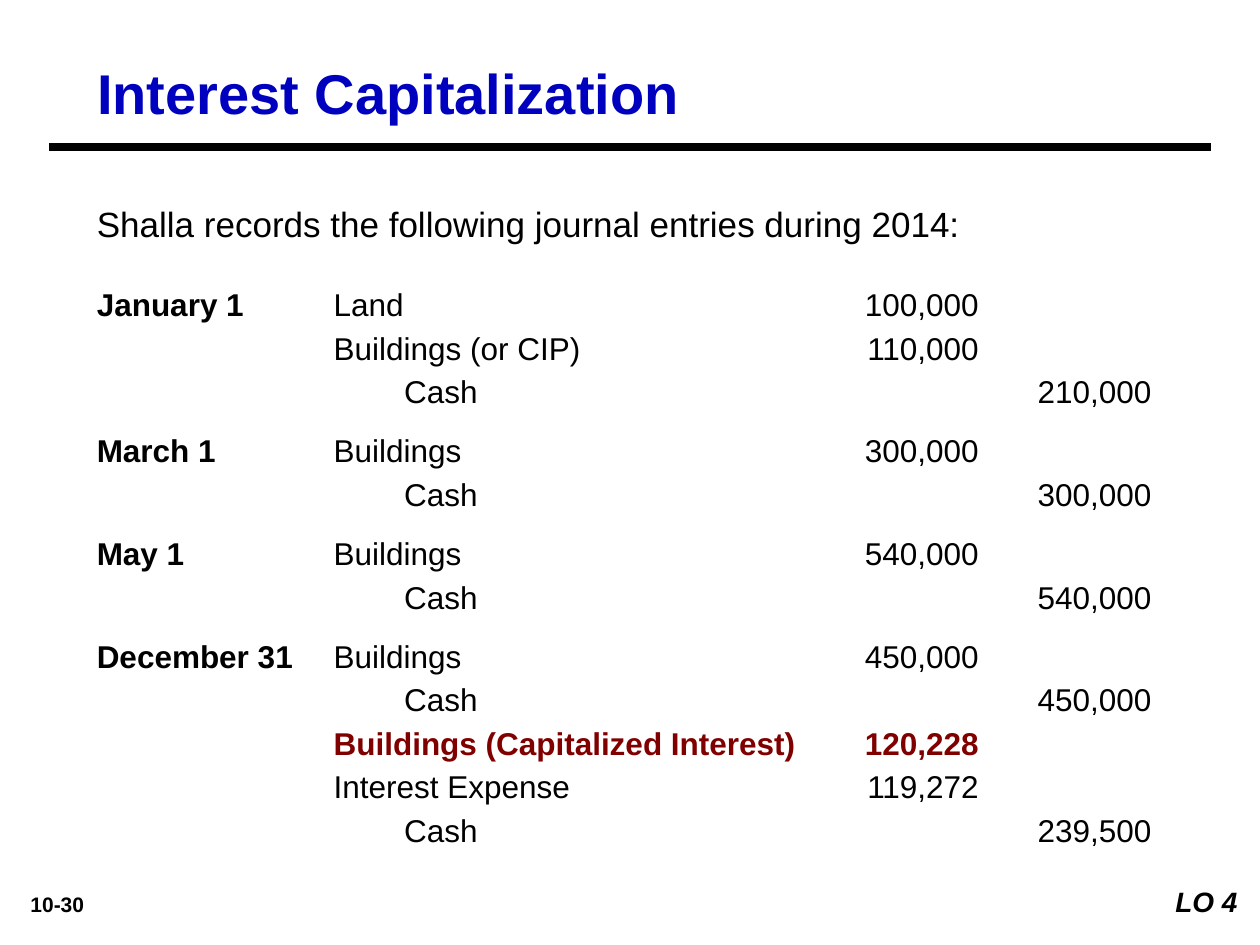
from dataclasses import dataclass

from lxml import etree
from pptx import Presentation
from pptx import util as u
from pptx.dml.color import RGBColor
from pptx.enum import shapes, text
from pptx.oxml import ns

BLACK = RGBColor(0x00, 0x00, 0x00)
WHITE = RGBColor(0xFF, 0xFF, 0xFF)
BLUE = RGBColor(0x00, 0x00, 0xBF)
MAROON = RGBColor(0x80, 0x00, 0x00)
TABS = ((1.88, "l"), (2.44, "l"), (7, "r"), (8.37, "r"))


@dataclass(frozen=True)
class Entry:
    account: str
    amount: str
    date: str = ""
    credit: bool = False
    highlight: bool = False


@dataclass(frozen=True)
class Label:
    words: str
    box: tuple[float, float, float, float]
    size: float
    bold: bool = False
    italic: bool = False
    filled: bool = False
    align: text.PP_ALIGN = text.PP_ALIGN.LEFT
    line_spacing: float = 1.0


ENTRIES = (
    Entry("Land", "100,000", "January 1"),
    Entry("Buildings (or CIP)", "110,000"),
    Entry("Cash", "210,000", credit=True),
    Entry("Buildings", "300,000", "March 1"),
    Entry("Cash", "300,000", credit=True),
    Entry("Buildings", "540,000", "May 1"),
    Entry("Cash", "540,000", credit=True),
    Entry("Buildings", "450,000", "December 31"),
    Entry("Cash", "450,000", credit=True),
    Entry("Buildings (Capitalized Interest)", "120,228", highlight=True),
    Entry("Interest Expense", "119,272"),
    Entry("Cash", "239,500", credit=True),
)

LABELS = (
    Label("10-30", (0.08, 7.03, 0.75, 0.3), 12, bold=True,
          align=text.PP_ALIGN.CENTER),
    Label("LO 4", (9, 6.97, 0.92, 0.37), 16, bold=True, italic=True,
          filled=True, align=text.PP_ALIGN.RIGHT),
    Label("Shalla records the following journal entries during 2014:",
          (0.67, 1.49, 8.75, 0.51), 20, line_spacing=1.2),
)


def add_run(p, words: str, size: float, color: RGBColor = BLACK,
            bold: bool = False, italic: bool = False) -> None:
    r = p.add_run()
    r.text = words
    values = {"name": "Arial", "size": u.Pt(size), "bold": bold, "italic": italic}
    for name, value in values.items():
        setattr(r.font, name, value)
    r.font.color.rgb = color


def add_box(s, box: tuple[float, float, float, float], filled: bool = False):
    lengths = map(u.Inches, box)
    if filled:
        sp = s.shapes.add_shape(shapes.MSO_SHAPE.RECTANGLE, *lengths)
        sp.shadow.inherit = False
        sp.fill.solid()
        sp.fill.fore_color.rgb = WHITE
        sp.line.fill.background()
    else:
        sp = s.shapes.add_textbox(*lengths)
    sp.text_frame.word_wrap = True
    sp.text_frame.vertical_anchor = text.MSO_ANCHOR.TOP
    return sp


def add_label(s, label: Label) -> None:
    sp = add_box(s, label.box, label.filled)
    p = sp.text_frame.paragraphs[0]
    p.alignment = label.align
    p.line_spacing = label.line_spacing
    add_run(p, label.words, label.size, bold=label.bold, italic=label.italic)


def add_tabs(p) -> None:
    tab_list = etree.SubElement(p._p.get_or_add_pPr(), ns.qn("a:tabLst"))
    for position, align in TABS:
        etree.SubElement(tab_list, ns.qn("a:tab"),
                         pos=str(u.Inches(position)), algn=align)


def add_journal(s, entries: tuple[Entry, ...]) -> None:
    tf = add_box(s, (0.67, 2.17, 8.83, 4.7)).text_frame
    for i, entry in enumerate(entries):
        p = tf.add_paragraph() if i else tf.paragraphs[0]
        add_tabs(p)
        p.line_spacing = 1.15
        if entry.date and i:
            p.space_before = u.Pt(9)
        add_run(p, f"{entry.date}\t", 18, bold=bool(entry.date))
        indent, gap = ("\t", "\t\t") if entry.credit else ("", "\t")
        add_run(p, f"{indent}{entry.account} {gap}{entry.amount}", 18,
                MAROON if entry.highlight else BLACK, entry.highlight)


def add_title(s, words: str) -> None:
    sp = s.shapes.title
    frame = {"left": 0.67, "top": 0.43, "width": 9, "height": 0.61}
    for name, value in frame.items():
        setattr(sp, name, u.Inches(value))
    tf = sp.text_frame
    tf.vertical_anchor = text.MSO_ANCHOR.MIDDLE
    tf.auto_size = text.MSO_AUTO_SIZE.NONE
    p = tf.paragraphs[0]
    p.alignment = text.PP_ALIGN.LEFT
    add_run(p, words, 32, BLUE, bold=True)


def add_rule(s) -> None:
    rule = s.shapes.add_connector(shapes.MSO_CONNECTOR.STRAIGHT,
                                  *map(u.Inches, (0.42, 1.17, 9.58, 1.17)))
    rule.line.color.rgb = BLACK
    rule.line.width = u.Pt(4.5)
    rule.line._get_or_add_ln().set("cap", "sq")
    etree.SubElement(rule._element.spPr, ns.qn("a:effectLst"))


def main() -> None:
    prs = Presentation()
    prs.slide_width, prs.slide_height = u.Inches(10), u.Inches(7.5)
    s = prs.slides.add_slide(prs.slide_layouts[5])
    s.background.fill.solid()
    s.background.fill.fore_color.rgb = WHITE
    for label in LABELS:
        add_label(s, label)
    add_journal(s, ENTRIES)
    add_title(s, "Interest Capitalization")
    add_rule(s)
    prs.save("out.pptx")


if __name__ == "__main__":
    main()
